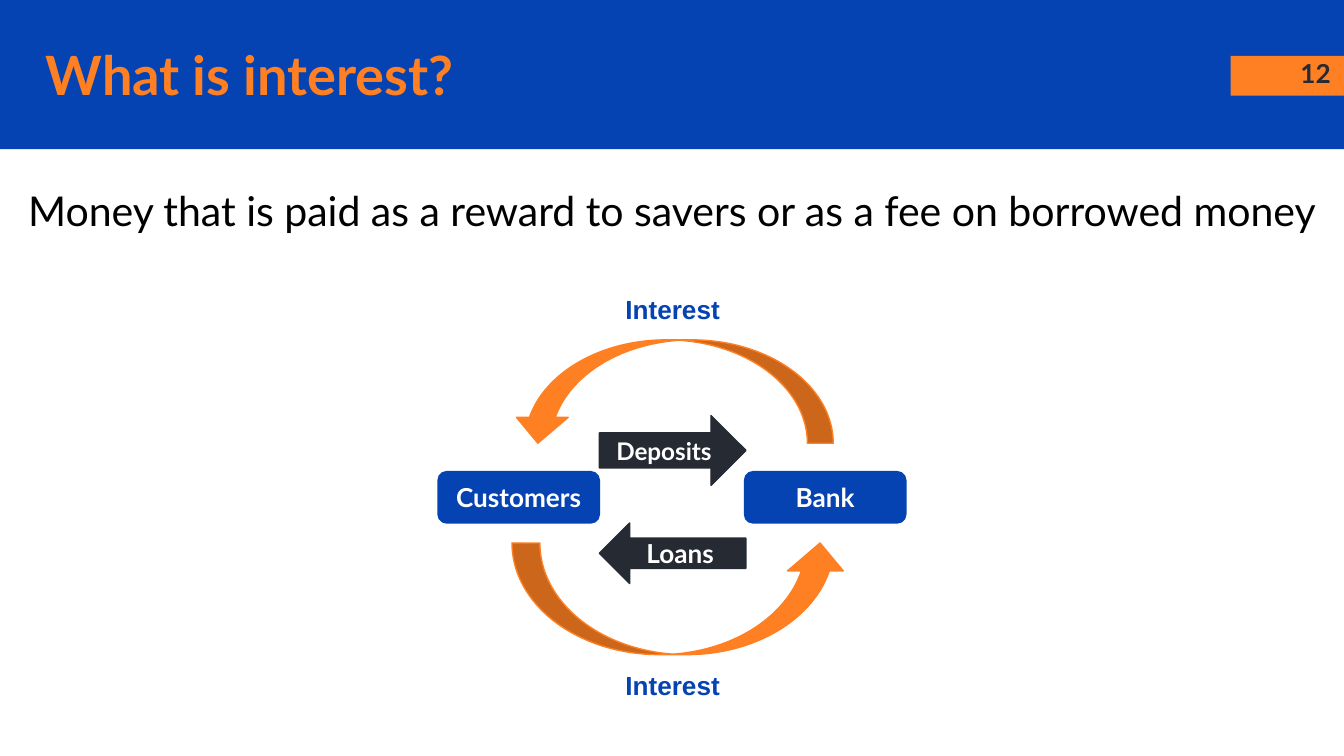
"""Build a slide that explains interest with a customer and bank cycle."""
from pptx import Presentation
from pptx.dml.color import RGBColor
from pptx.enum.shapes import MSO_SHAPE as Preset
from pptx.enum.text import MSO_ANCHOR as Anchor, PP_ALIGN as Align
from pptx.util import Pt

BLUE, ORANGE, DARK, WHITE, BLACK = "0543B3", "FF8022", "262A33", "FFFFFF", "000000"
WIDTH, HEIGHT = 720, 405
INSET = 7.2

BANDS = [(BLUE, (0, 0, WIDTH, 79.9)), (ORANGE, (659.3, 30, 60.7, 21.3))]

BOX_WIDTH, BOX_HEIGHT, BOX_TOP = 86.4, 27.5, 252.7
BOX_LEFT, GAP = 234.7, 77.8
PARTIES = ["Customers", "Bank"]

FLOWS = [
    ("Deposits", Preset.RIGHT_ARROW, 222.6, 37.4, 13),
    ("Loans", Preset.LEFT_ARROW, 280.2, 32.4, 14),
]
CURVES = [((274.3, 182.1, 172.1, 55.4), 0), ((274.3, 290.9, 180, 59.8), 180)]
INTEREST_TOPS = [149.8, 351.4]

TEXTS = [
    ("12", (676.8, 23.8, 43.2, 31), dict(size=14, color=DARK, bold=True, align=Align.RIGHT)),
    ("Money that is paid as a reward to savers or as a fee on borrowed money",
     (0, 92.2, WIDTH, 41), dict(size=22, color=BLACK)),
    ("What is interest?", (17.3, 19.4, 609.1, 40.3),
     dict(size=29, color=ORANGE, bold=True, align=Align.LEFT, anchor=Anchor.MIDDLE)),
]
TEXTS += [
    ("Interest", (274.3, top, 172.1, 31.7), dict(size=14, color=BLUE, bold=True, font="Arial"))
    for top in INTEREST_TOPS
]


def rgb(value):
    """Turn a hex string into a colour."""
    return RGBColor.from_string(value)


def write(shape, text, size=14, color=WHITE, bold=False, font="Lato",
          align=Align.CENTER, anchor=Anchor.TOP):
    """Put formatted text into a shape."""
    frame = shape.text_frame
    frame.word_wrap = True
    frame.vertical_anchor = anchor
    frame.margin_left = frame.margin_right = Pt(INSET)
    frame.margin_top = frame.margin_bottom = Pt(INSET)
    paragraph = frame.paragraphs[0]
    paragraph.alignment = align
    run = paragraph.add_run()
    run.text = text
    run.font.size = Pt(size)
    run.font.name = font
    run.font.bold = bold
    run.font.color.rgb = rgb(color)


def draw(slide, preset, place, color, outlined=True):
    """Add a filled preset shape, with an outline of the same colour if wanted."""
    shape = slide.shapes.add_shape(preset, *map(Pt, place))
    shape.shadow.inherit = False
    shape.fill.solid()
    shape.fill.fore_color.rgb = rgb(color)
    if outlined:
        shape.line.color.rgb = rgb(color)
        shape.line.width = Pt(0.75)
    else:
        shape.line.fill.background()
    return shape


def main():
    """Build and save the slide."""
    presentation = Presentation()
    presentation.slide_width, presentation.slide_height = Pt(WIDTH), Pt(HEIGHT)
    slide = presentation.slides.add_slide(presentation.slide_layouts[6])

    for color, place in BANDS:
        draw(slide, Preset.RECTANGLE, place, color, outlined=False)

    for place, rotation in CURVES:
        curve = draw(slide, Preset.CURVED_DOWN_ARROW, place, ORANGE)
        curve.rotation = rotation
        curve._element.spPr.xfrm.set("flipH", "1")

    for index, name in enumerate(PARTIES):
        left = BOX_LEFT + index * (BOX_WIDTH + GAP)
        box = draw(slide, Preset.ROUNDED_RECTANGLE, (left, BOX_TOP, BOX_WIDTH, BOX_HEIGHT), BLUE)
        write(box, name, bold=True, anchor=Anchor.MIDDLE)

    for name, preset, top, height, size in FLOWS:
        arrow = draw(slide, preset, (BOX_LEFT + BOX_WIDTH, top, GAP + 0.7, height), DARK)
        write(arrow, name, size=size, bold=True, anchor=Anchor.MIDDLE)

    for text, place, style in TEXTS:
        write(slide.shapes.add_textbox(*map(Pt, place)), text, **style)

    presentation.save("out.pptx")


if __name__ == "__main__":
    main()
